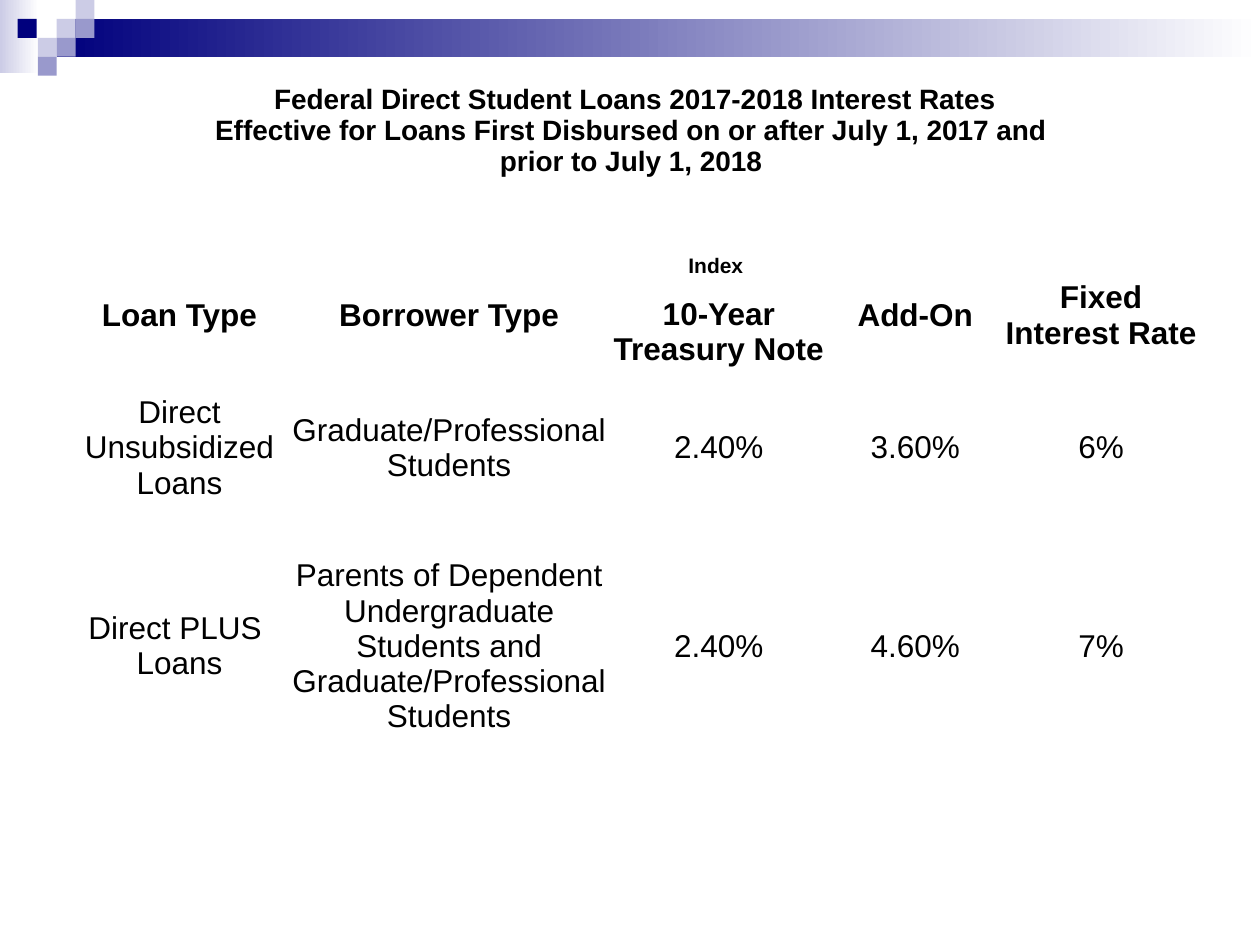
from pptx import Presentation
from pptx.dml.color import RGBColor
from pptx.enum.shapes import MSO_SHAPE
from pptx.enum.text import MSO_ANCHOR, PP_ALIGN
from pptx.util import Inches, Pt

RECTANGLE = MSO_SHAPE.RECTANGLE
CENTER = PP_ALIGN.CENTER
TOP, MIDDLE = MSO_ANCHOR.TOP, MSO_ANCHOR.MIDDLE

NAVY, LAVENDER, PERIWINKLE, WHITE, BLACK = "00007D", "CCCCE6", "9999CC", "FFFFFF", "000000"

# left, top, width, height, start colour; each fades to white
BANDS = [
    (0, 0, 0.31, 0.58, LAVENDER),
    (0.45, 0.15, 9.55, 0.3, NAVY),
]
SQUARE = 0.15
SQUARES = [  # left, top, colour
    (0.45, 0.15, LAVENDER),
    (0.6, 0, LAVENDER),
    (0.6, 0.15, PERIWINKLE),
    (0.3, 0.3, LAVENDER),
    (0.14, 0.15, NAVY),
    (0.45, 0.3, PERIWINKLE),
    (0.3, 0.45, PERIWINKLE),
]

TABLE_LEFT, TABLE_TOP = 0.58, 0.67
COLUMN_WIDTHS = [1.69, 2.59, 1.69, 1.43, 1.52]
ROW_HEIGHTS = [1.31, 0.26, 0.79, 1.05, 2.1]
TITLE = (
    "Federal Direct Student Loans 2017-2018 Interest Rates\v"
    "Effective for Loans First Disbursed on or after July 1, 2017 and \v"
    "prior to July 1, 2018 "
)
HEADERS = ["Loan Type", "Borrower Type", "Index ", "Add-On", "Fixed Interest Rate "]
INDEX_COLUMN = 2
INDEX_NAME = "10-Year Treasury Note"
LOANS = [
    ["Direct Unsubsidized Loans", "Graduate/Professional Students",
     "2.40%", "3.60%", "6%"],
    ["Direct PLUS \vLoans",
     "Parents of Dependent Undergraduate Students and Graduate/Professional Students",
     "2.40%", "4.60%", "7%"],
]


def color(hex_string):
    return RGBColor.from_string(hex_string)


def add_block(page, left, top, width, height, start, end=None):
    """Add a borderless rectangle, fading from start to end if end is given."""
    block = page.shapes.add_shape(
        RECTANGLE, Inches(left), Inches(top), Inches(width), Inches(height))
    block.shadow.inherit = False
    block.line.fill.background()
    if end:
        block.fill.gradient()
        block.fill.gradient_angle = 0
        for stop, shade in zip(block.fill.gradient_stops, (start, end)):
            stop.color.rgb = color(shade)
    else:
        block.fill.solid()
        block.fill.fore_color.rgb = color(start)


def write_cell(cell, text, size=18, bold=False, anchor=MIDDLE):
    cell.text = text
    cell.vertical_anchor = anchor
    para = cell.text_frame.paragraphs[0]
    para.alignment = CENTER
    for span in para.runs:
        span.font.name = "Arial"
        span.font.size = Pt(size)
        span.font.bold = bold
        span.font.color.rgb = color(BLACK)


def add_rate_table(page):
    table = page.shapes.add_table(
        len(ROW_HEIGHTS), len(COLUMN_WIDTHS), Inches(TABLE_LEFT), Inches(TABLE_TOP),
        Inches(sum(COLUMN_WIDTHS)), Inches(sum(ROW_HEIGHTS))).table
    table.first_row = table.horz_banding = False
    for column, width in zip(table.columns, COLUMN_WIDTHS):
        column.width = Inches(width)
    for row, height in zip(table.rows, ROW_HEIGHTS):
        row.height = Inches(height)
    for cell in table.iter_cells():
        cell.fill.background()
        cell.margin_left = cell.margin_right = cell.margin_top = cell.margin_bottom = 0

    table.cell(0, 0).merge(table.cell(0, len(COLUMN_WIDTHS) - 1))
    write_cell(table.cell(0, 0), TITLE, size=16, bold=True, anchor=TOP)
    for column, header in enumerate(HEADERS):
        cell = table.cell(1, column)
        if column == INDEX_COLUMN:
            write_cell(cell, header, size=12, bold=True)
            write_cell(table.cell(2, column), INDEX_NAME, bold=True)
        else:
            cell.merge(table.cell(2, column))
            write_cell(cell, header, bold=True)
    for row, loan in enumerate(LOANS, start=3):
        for column, text in enumerate(loan):
            write_cell(table.cell(row, column), text)


def main():
    deck = Presentation()
    deck.slide_width, deck.slide_height = Inches(10), Inches(7.5)
    page = deck.slides.add_slide(deck.slide_layouts[6])
    for left, top, width, height, start in BANDS:
        add_block(page, left, top, width, height, start, WHITE)
    for left, top, shade in SQUARES:
        add_block(page, left, top, SQUARE, SQUARE, shade)
    add_rate_table(page)
    deck.save("out.pptx")


if __name__ == "__main__":
    main()
